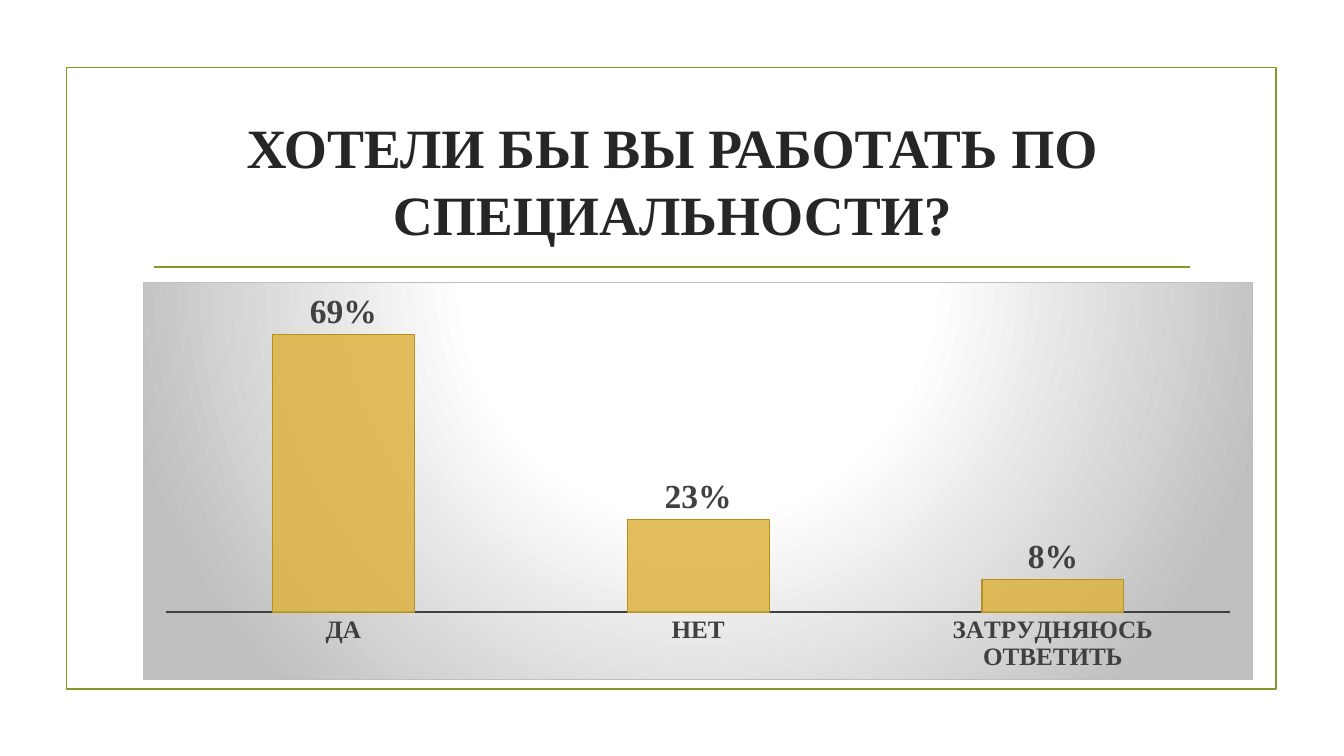
import pptx
import pptx.chart.data
import pptx.dml.color
import pptx.enum.chart
import pptx.enum.shapes
import pptx.enum.text
import pptx.oxml
import pptx.oxml.ns
import pptx.util

Cm = pptx.util.Cm
Pt = pptx.util.Pt
qn = pptx.oxml.ns.qn
NS = pptx.oxml.ns.nsdecls("a", "c")

COLORS = {
    "frame": "83992A",
    "title": "262626",
    "label": "404040",
    "bar": "DEB340",
    "bar_edge": "B78E20",
    "light": "FFFFFF",
    "shade": "BFBFBF",
}


class SurveySlide:
    def __init__(self, prs, font_name):
        self.font_name = font_name
        self.s = prs.slides.add_slide(prs.slide_layouts[5])

    def color(self, name):
        return pptx.dml.color.RGBColor.from_string(COLORS[name])

    def style_font(self, font, size, color):
        font.name = self.font_name
        font.size = Pt(size)
        font.bold = True
        font.color.rgb = self.color(color)

    def style_line(self, line, color, width):
        line.color.rgb = self.color(color)
        line.width = Pt(width)

    def frame(self, left, top, width, height):
        sp = self.s.shapes.add_shape(
            pptx.enum.shapes.MSO_SHAPE.RECTANGLE, Cm(left), Cm(top), Cm(width), Cm(height))
        sp.shadow.inherit = False
        sp.fill.background()
        self.style_line(sp.line, "frame", 1.25)

    def rule(self, left, right, y):
        cxn = self.s.shapes.add_connector(
            pptx.enum.shapes.MSO_CONNECTOR.STRAIGHT, Cm(left), Cm(y), Cm(right), Cm(y))
        self.style_line(cxn.line, "frame", 1.25)
        cxn._element.spPr.append(pptx.oxml.parse_xml(f"<a:effectLst {NS}/>"))

    def title(self, text, left, top, width, height):
        sp = self.s.shapes.title
        sp.left, sp.top, sp.width, sp.height = Cm(left), Cm(top), Cm(width), Cm(height)
        tf = sp.text_frame
        tf.text = text
        tf.word_wrap = True
        tf.auto_size = pptx.enum.text.MSO_AUTO_SIZE.NONE
        tf.vertical_anchor = pptx.enum.text.MSO_ANCHOR.MIDDLE
        p = tf.paragraphs[0]
        p.alignment = pptx.enum.text.PP_ALIGN.CENTER
        self.style_font(p.runs[0].font, 39.6, "title")

    def column_chart(self, answers, left, top, width, height):
        data = pptx.chart.data.CategoryChartData(number_format="0%")
        data.categories = list(answers)
        data.add_series("Series 1", list(answers.values()))
        chart = self.s.shapes.add_chart(
            pptx.enum.chart.XL_CHART_TYPE.COLUMN_CLUSTERED,
            Cm(left), Cm(top), Cm(width), Cm(height), data).chart
        chart.has_legend = False
        chart.has_title = False
        chart.font.name = self.font_name
        chart.font.size = Pt(10)
        self.style_axes(chart)
        self.style_bars(chart.plots[0])
        self.chart_background(chart)
        self.plot_layout(chart, x=0.02, y=0.02, w=0.96, h=0.81)

    def style_axes(self, chart):
        axis = chart.category_axis
        axis.major_tick_mark = pptx.enum.chart.XL_TICK_MARK.NONE
        axis.has_major_gridlines = False
        self.style_font(axis.tick_labels.font, 18, "label")
        self.style_line(axis.format.line, "label", 1.5)
        values = chart.value_axis
        values.minimum_scale = 0
        values.maximum_scale = 0.8
        values.has_major_gridlines = False
        values.visible = False

    def style_bars(self, plot):
        plot.gap_width = 150
        plot.vary_by_categories = False
        bars = plot.series[0].format
        bars.fill.solid()
        bars.fill.fore_color.rgb = self.color("bar")
        self.style_line(bars.line, "bar_edge", 0.75)
        fill = plot.series[0]._element.find(f"{qn('c:spPr')}/{qn('a:solidFill')}")
        fill[0].append(pptx.oxml.parse_xml(f'<a:alpha {NS} val="85000"/>'))
        plot.has_data_labels = True
        labels = plot.data_labels
        labels.show_value = True
        labels.number_format = "0%"
        labels.number_format_is_linked = False
        labels.position = pptx.enum.chart.XL_LABEL_POSITION.OUTSIDE_END
        self.style_font(labels.font, 24, "label")

    def chart_background(self, chart):
        stops = "".join(
            f'<a:gs pos="{pos * 1000}"><a:srgbClr val="{COLORS[name]}"/></a:gs>'
            for pos, name in ((0, "light"), (39, "light"), (100, "shade")))
        chart.element.find(qn("c:chart")).addnext(pptx.oxml.parse_xml(
            f'<c:spPr {NS}><a:gradFill>'
            f'<a:gsLst>{stops}</a:gsLst><a:path path="circle">'
            '<a:fillToRect l="50000" t="-80000" r="50000" b="180000"/></a:path></a:gradFill>'
            f'<a:ln w="{Pt(0.75)}"><a:solidFill><a:srgbClr val="{COLORS["shade"]}"/>'
            '</a:solidFill></a:ln></c:spPr>'))

    def plot_layout(self, chart, **box):
        area = chart.element.find(f"{qn('c:chart')}/{qn('c:plotArea')}")
        for layout in area.findall(qn("c:layout")):
            area.remove(layout)
        sizes = "".join(f'<c:{key} val="{value}"/>' for key, value in box.items())
        area.insert(0, pptx.oxml.parse_xml(
            f'<c:layout {NS}><c:manualLayout><c:layoutTarget val="inner"/>'
            '<c:xMode val="edge"/><c:yMode val="edge"/>'
            f'{sizes}</c:manualLayout></c:layout>'))


def main():
    prs = pptx.Presentation()
    prs.slide_width = Cm(33.87)
    prs.slide_height = Cm(19.05)
    slide = SurveySlide(prs, "Times New Roman")
    slide.frame(1.68, 1.7, 30.48, 15.67)
    slide.rule(3.89, 30, 6.73)
    slide.title("ХОТЕЛИ БЫ ВЫ РАБОТАТЬ ПО СПЕЦИАЛЬНОСТИ?", 3.61, 2.72, 26.67, 3.63)
    answers = {"ДА": 0.69, "НЕТ": 0.23, "ЗАТРУДНЯЮСЬ ОТВЕТИТЬ": 0.08}
    slide.column_chart(answers, 3.61, 7.11, 27.97, 10.03)
    prs.save("out.pptx")


if __name__ == "__main__":
    main()
